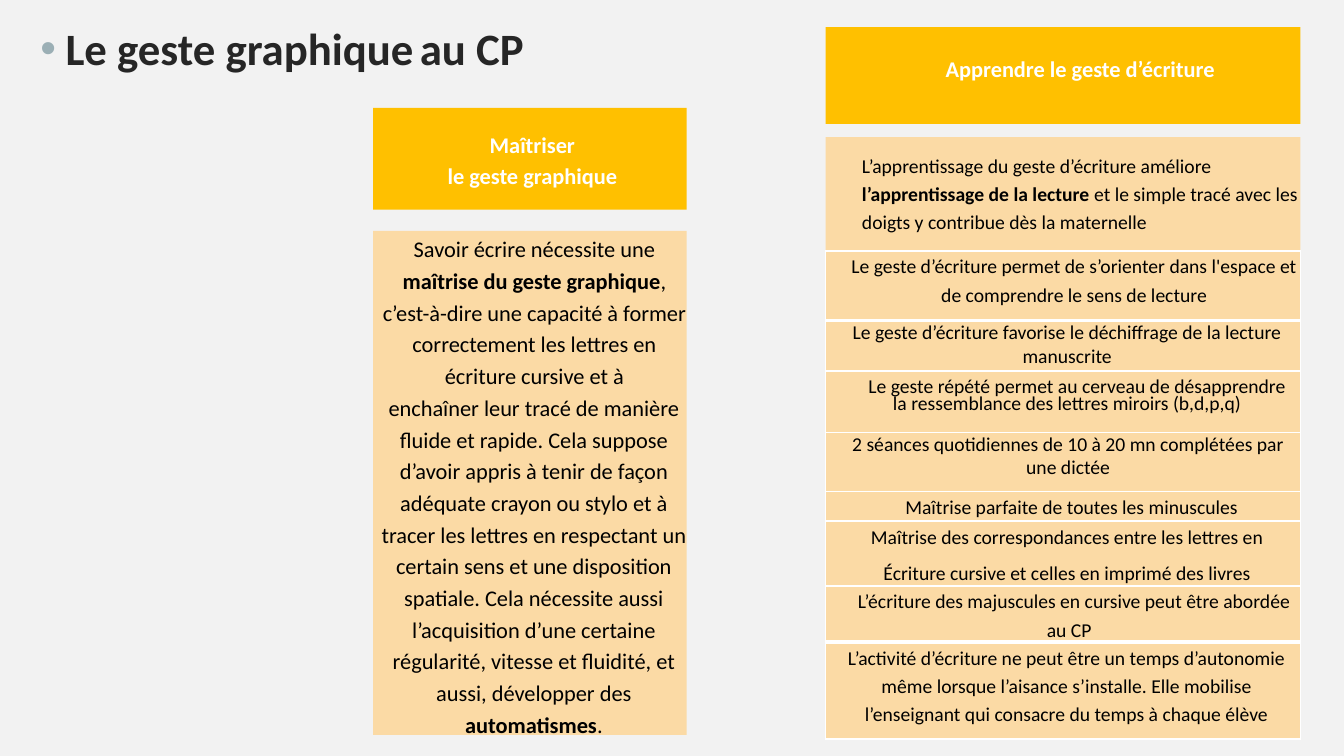
import pptx
import pptx.dml.color
import pptx.enum.shapes
import pptx.enum.text
import pptx.oxml
import pptx.oxml.ns
import pptx.util

WIDTH, HEIGHT = pptx.util.Inches(13.33), pptx.util.Inches(7.5)
COLORS = {
    "background": "F2F2F2", "title": "262626", "bullet": "9BAFB5", "banner": "FFC000",
    "panel": "FBDAA5", "banner_text": "FFFFFF", "text": "000000", "border": "FFFFFF",
}
FONT = "Calibri"
ALIGN = pptx.enum.text.PP_ALIGN
TOP = pptx.enum.text.MSO_ANCHOR.TOP
FRAME = {"word_wrap": True, "auto_size": pptx.enum.text.MSO_AUTO_SIZE.NONE, "vertical_anchor": TOP}
MARGINS = {"margin_left": 0, "margin_right": 0, "margin_top": 0, "margin_bottom": 0}
CENTERED = {"alignment": ALIGN.CENTER}
SPACED = {"alignment": ALIGN.CENTER, "line_spacing": 1.18}
LOOSE = {"alignment": ALIGN.CENTER, "line_spacing": 1.2, "space_before": pptx.util.Pt(5.5)}
TIGHT = {"alignment": ALIGN.CENTER, "line_spacing": pptx.util.Pt(12.2)}
INTRO = {"alignment": ALIGN.LEFT, "line_spacing": 1.2}

MASTERY_TITLE = [
    ("**Maîtriser**", 0.05, 0, CENTERED),
    ("**le geste graphique**", 0.05, 0, CENTERED | {"space_before": pptx.util.Pt(2.8)}),
]
MASTERY = [
    ("Savoir écrire nécessite une **maîtrise du geste graphique**, c’est-à-dire une capacité à "
     "former correctement les lettres en écriture cursive et à", 0.09, 0, SPACED),
    ("enchaîner leur tracé de manière fluide et rapide. Cela suppose d’avoir appris à tenir de "
     "façon adéquate crayon ou stylo et à tracer les lettres en respectant un certain sens et une "
     "disposition spatiale. Cela nécessite aussi l’acquisition d’une certaine régularité, vitesse "
     "et fluidité, et aussi, développer des **automatismes**.", 0.08, 0, SPACED),
]
LEARNING_TITLE = [("**Apprendre le geste d’écriture**", 0.34, 0, SPACED)]
LEARNING = [
    ("L’apprentissage du geste d’écriture améliore **l’apprentissage de la lecture **et le simple "
     "tracé avec les doigts y contribue dès la maternelle", 0.36, 0, INTRO),
]
PRACTICES = [
    (0.69, [("Le geste d’écriture permet de s’orienter dans l'espace et de comprendre le sens "
             "de lecture", 0.22, 0, SPACED)]),
    (0.5, [("Le geste d’écriture favorise le déchiffrage de la lecture manuscrite",
            0.08, 0, CENTERED)]),
    (0.61, [("Le geste répété permet au cerveau de désapprendre", 0.13, 0.15, SPACED),
            ("la ressemblance des lettres miroirs (b,d,p,q)", 0.08, 0, TIGHT)]),
    (0.59, [("2 séances quotidiennes de 10 à 20 mn complétées par une dictée",
             0.1, 0, CENTERED)]),
    (0.29, [("Maîtrise parfaite de toutes les minuscules", 0.52, -0.35, SPACED)]),
    (0.62, [("Maîtrise des correspondances entre les lettres en", 0.08, 0, LOOSE),
            ("Écriture cursive et celles en imprimé des livres", 0.08, 0, LOOSE)]),
    (0.54, [("L’écriture des majuscules en cursive peut être abordée au CP", 0.12, 0.1, SPACED)]),
    (0.96, [("L’activité d’écriture ne peut être un temps d’autonomie même lorsque l’aisance "
             "s’installe. Elle mobilise l’enseignant qui consacre du temps à chaque élève",
             0.07, 0, SPACED)]),
]
THICK_RULES = {1, len(PRACTICES) - 1}


def area(left, top, width, height):
    """Turn percentages of the slide into a position and a size."""
    return [round(share * side / 100) for share, side in
            zip((left, top, width, height), (WIDTH, HEIGHT, WIDTH, HEIGHT))]


def apply(target, formats):
    """Set each format value on the target."""
    for attribute, value in formats.items():
        setattr(target, attribute, value)


def rgb(color):
    """Look up a named colour."""
    return pptx.dml.color.RGBColor.from_string(COLORS[color])


def paint(filled, color):
    """Give a solid fill."""
    filled.fill.solid()
    filled.fill.fore_color.rgb = rgb(color)


def indent(paragraph, left, first):
    """Set the left margin and first-line indent in inches."""
    properties = paragraph._p.get_or_add_pPr()
    properties.set("marL", str(pptx.util.Inches(left)))
    properties.set("indent", str(pptx.util.Inches(first)))
    return properties


def add_run(paragraph, words, size, color, bold):
    """Add one run of formatted words."""
    run = paragraph.add_run()
    run.text = words
    apply(run.font, {"name": FONT, "size": pptx.util.Pt(size), "bold": bold})
    run.font.color.rgb = rgb(color)


def write(frame, paragraphs, size, color):
    """Fill a text frame, with bold words between double asterisks."""
    for number, (wording, left, first, formats) in enumerate(paragraphs):
        paragraph = frame.add_paragraph() if number else frame.paragraphs[0]
        apply(paragraph, formats)
        indent(paragraph, left, first)
        for position, words in enumerate(wording.split("**")):
            if words:
                add_run(paragraph, words, size, color, position % 2 == 1)


def add_title(slide):
    """Format the title placeholder as a bulleted heading."""
    title = slide.shapes.title
    apply(title, dict(zip(("left", "top", "width", "height"), area(2.25, 1.87, 94.52, 98.13))))
    apply(title.text_frame, FRAME | {"margin_top": pptx.util.Inches(0.07)})
    heading = title.text_frame.paragraphs[0]
    apply(heading, {"alignment": ALIGN.LEFT})
    properties = indent(heading, 0.25, -0.25)
    namespace = pptx.oxml.ns.nsdecls("a")
    for bullet in (f'<a:buClr {namespace}><a:srgbClr val="{COLORS["bullet"]}"/></a:buClr>',
                   f'<a:buFont {namespace} typeface="Arial"/>',
                   f'<a:buChar {namespace} char="•"/>'):
        properties.append(pptx.oxml.parse_xml(bullet))
    for words, size in (("Le geste graphique", 32), (" ", 18), ("au CP", 32)):
        add_run(heading, words, size, "title", True)


def add_block(slide, place, fill, paragraphs, size, color, gap=0):
    """Add a filled rectangle with text starting after a gap in inches."""
    block = slide.shapes.add_shape(pptx.enum.shapes.MSO_SHAPE.RECTANGLE, *area(*place))
    block.shadow.inherit = False
    block.line.fill.background()
    paint(block, fill)
    apply(block.text_frame, FRAME | MARGINS | {"margin_top": pptx.util.Inches(gap)})
    write(block.text_frame, paragraphs, size, color)


def add_borders(cell, widths):
    """Draw the cell borders with widths in points."""
    for side, width in widths.items():
        cell._tc.get_or_add_tcPr().append(pptx.oxml.parse_xml(
            f'<a:{side} {pptx.oxml.ns.nsdecls("a")} w="{pptx.util.Pt(width)}"><a:solidFill>'
            f'<a:srgbClr val="{COLORS["border"]}"/></a:solidFill></a:{side}>'))


def add_practices(slide, place):
    """Add the one-column table of practices."""
    table = slide.shapes.add_table(len(PRACTICES), 1, *area(*place)).table
    apply(table, {"first_row": False, "horz_banding": False})
    for number, (height, paragraphs) in enumerate(PRACTICES):
        table.rows[number].height = pptx.util.Inches(height)
        cell = table.cell(number, 0)
        apply(cell, MARGINS | {"vertical_anchor": TOP})
        above, below = (3 if rule in THICK_RULES else 1 for rule in (number, number + 1))
        add_borders(cell, {"lnL": 1, "lnR": 1, "lnT": above, "lnB": below})
        paint(cell, "panel")
        write(cell.text_frame, paragraphs, 14, "text")


def main():
    """Build and save the slide."""
    deck = pptx.Presentation()
    apply(deck, {"slide_width": WIDTH, "slide_height": HEIGHT})
    slide = deck.slides.add_slide(deck.slide_layouts[5])
    paint(slide.background, "background")
    add_title(slide)
    add_block(slide, (27.76, 14.27, 23.33, 13.47), "banner", MASTERY_TITLE, 16, "banner_text", 0.23)
    add_block(slide, (27.76, 30.53, 23.33, 66.67), "panel", MASTERY, 16, "text")
    add_block(slide, (61.44, 3.6, 35.33, 12.8), "banner", LEARNING_TITLE, 16, "banner_text", 0.23)
    add_block(slide, (61.44, 18.13, 35.33, 15.07), "panel", LEARNING, 14, "text", 0.12)
    add_practices(slide, (61.44, 33.2, 35.33, 64))
    deck.save("out.pptx")


if __name__ == "__main__":
    main()
